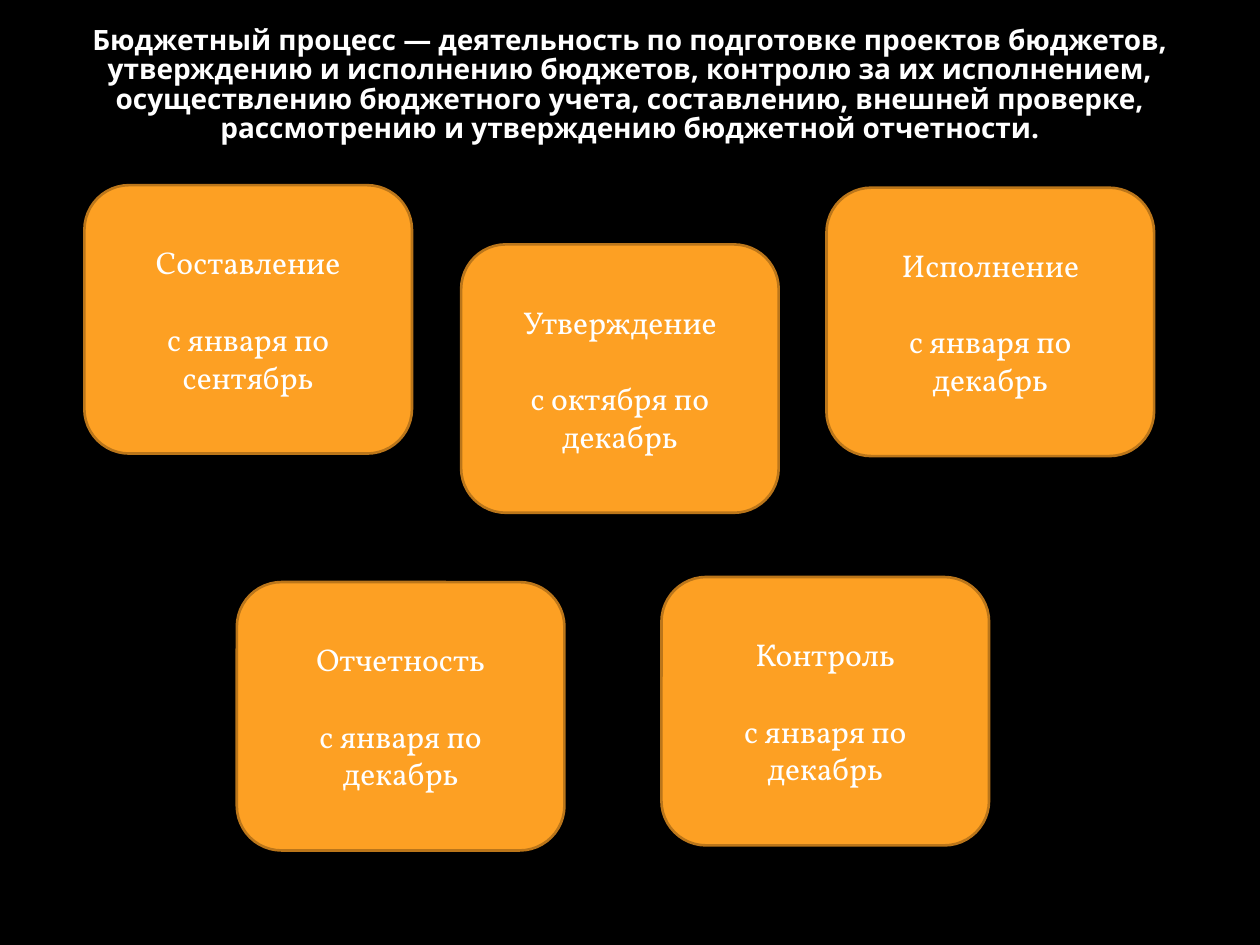
from pptx import Presentation
from pptx.dml.color import RGBColor
from pptx.enum.shapes import MSO_SHAPE
from pptx.enum.text import MSO_ANCHOR, PP_ALIGN
from pptx.util import Inches, Pt

BLACK = RGBColor(0x00, 0x00, 0x00)
WHITE = RGBColor(0xFF, 0xFF, 0xFF)
ORANGE = RGBColor(0xFD, 0xA0, 0x23)
BROWN = RGBColor(0xBB, 0x76, 0x1A)

COLS, ROWS = 100, 75
WIDE, HIGH = 26, 21.3

TITLE = (
    "Бюджетный процесс — деятельность по подготовке проектов бюджетов, "
    "утверждению и исполнению бюджетов, контролю за их исполнением, "
    "осуществлению бюджетного учета, составлению, внешней проверке, "
    "рассмотрению и утверждению бюджетной отчетности."
)
YEAR = "с января по декабрь"
STAGES = [
    (6.7, 14.7, WIDE, "Составление", "с января по сентябрь"),
    (36.6, 19.4, 25.2, "Утверждение", "с октября по декабрь"),
    (65.6, 14.9, WIDE, "Исполнение", YEAR),
    (18.8, 46.2, WIDE, "Отчетность", YEAR),
    (52.5, 45.8, WIDE, "Контроль", YEAR),
]


def write(frame, *lines, font, size, bold=False, gap=0, pitch=None):
    """Fill a text frame with centred paragraphs, gap points apart."""
    frame.word_wrap = True
    frame.vertical_anchor = MSO_ANCHOR.MIDDLE
    for i, line in enumerate(lines):
        para = frame.add_paragraph() if i else frame.paragraphs[0]
        para.alignment = PP_ALIGN.CENTER
        para.space_before = Pt(gap if i else 0)
        para.line_spacing = pitch
        run = para.add_run()
        run.text = line
        run.font.name = font
        run.font.size = Pt(size)
        run.font.bold = bold
        run.font.color.rgb = WHITE


class Deck:
    """Holds the style and the current slide, measured in grid cells."""

    head = dict(font="Noto Sans", size=16, bold=True, pitch=0.88)
    body = dict(font="Vollkorn", size=18, gap=22)

    def __init__(self):
        self.show = Presentation()
        self.show.slide_width = Inches(10)
        self.show.slide_height = Inches(7.5)
        self.slide = self.show.slides.add_slide(self.show.slide_layouts[6])
        fill = self.slide.background.fill
        fill.solid()
        fill.fore_color.rgb = BLACK

    def area(self, x, y, w, h):
        col = self.show.slide_width / COLS
        row = self.show.slide_height / ROWS
        return [round(n) for n in (x * col, y * row, w * col, h * row)]

    def title(self, x, y, w, h, text):
        box = self.slide.shapes.add_textbox(*self.area(x, y, w, h))
        write(box.text_frame, text, **self.head)

    def card(self, x, y, w, h, *lines):
        card = self.slide.shapes.add_shape(
            MSO_SHAPE.ROUNDED_RECTANGLE, *self.area(x, y, w, h))
        card.shadow.inherit = False
        card.fill.solid()
        card.fill.fore_color.rgb = ORANGE
        card.line.color.rgb = BROWN
        card.line.width = Pt(1.5)
        write(card.text_frame, *lines, **self.body)


def main():
    deck = Deck()
    deck.title(5, 1.3, 90, 11, TITLE)
    for x, y, w, name, term in STAGES:
        deck.card(x, y, w, HIGH, name, term)
    deck.show.save("out.pptx")


if __name__ == "__main__":
    main()
